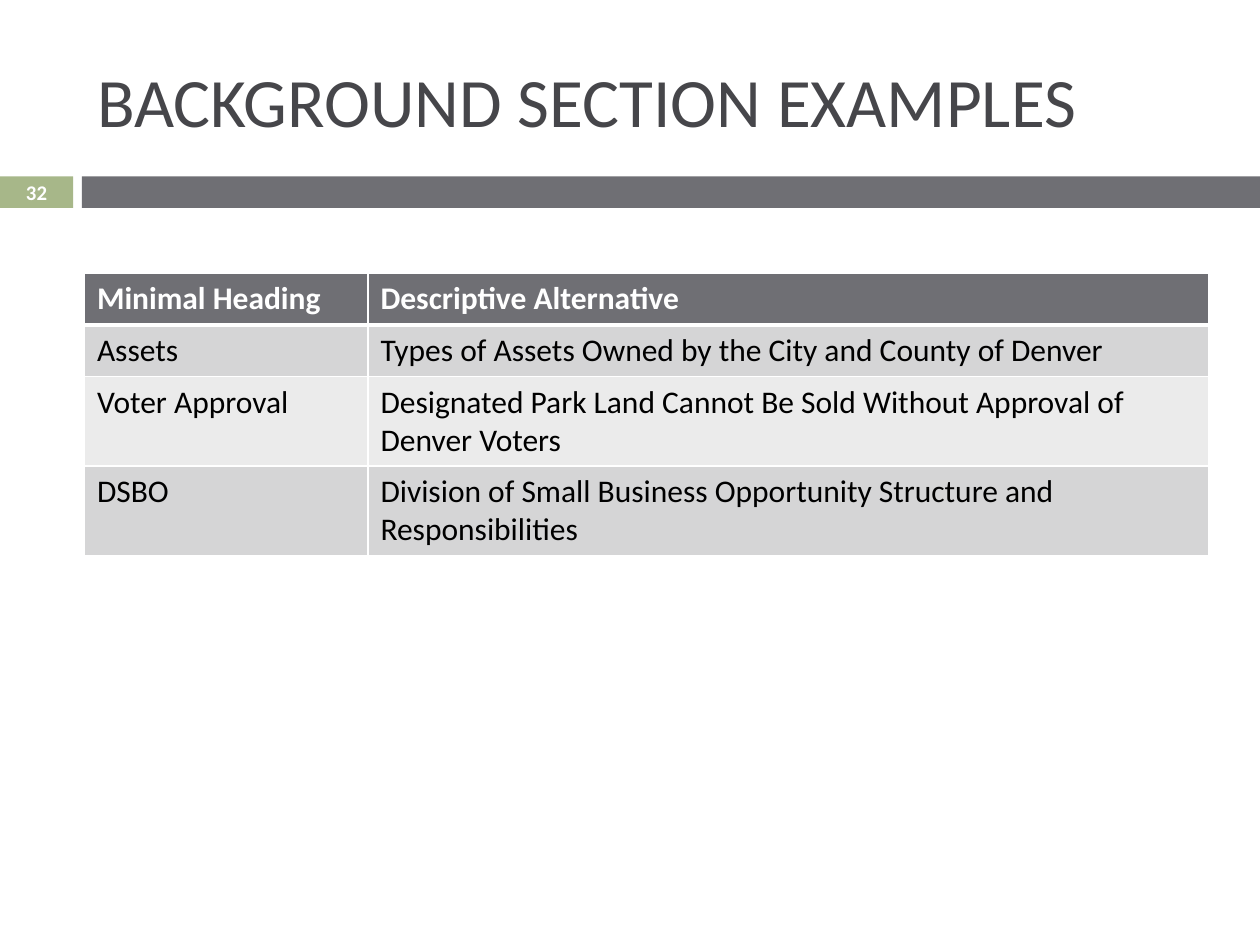
from lxml import etree
from pptx import Presentation
from pptx.dml.color import RGBColor
from pptx.enum.shapes import MSO_SHAPE
from pptx.enum.text import MSO_ANCHOR, PP_ALIGN
from pptx.oxml.ns import qn
from pptx.util import Inches, Pt

RECT = MSO_SHAPE.RECTANGLE
MIDDLE = MSO_ANCHOR.MIDDLE
LEFT, CENTER = PP_ALIGN.LEFT, PP_ALIGN.CENTER

WHITE = RGBColor(0xFF, 0xFF, 0xFF)
BLACK = RGBColor(0, 0, 0)
GREEN = RGBColor(0xA7, 0xB7, 0x89)
GRAY = RGBColor(0x6F, 0x6F, 0x74)
DARK = RGBColor(0x46, 0x46, 0x4A)
BANDS = (RGBColor(0xD5, 0xD5, 0xD6), RGBColor(0xEB, 0xEB, 0xEB))

FONT = "Calibri"
TITLE_FMT = {"name": FONT, "size": Pt(39.6), "bold": False, "color": DARK}
NUMBER_FMT = {"name": FONT, "size": Pt(11.9), "bold": True, "color": WHITE}
HEAD_FMT = {"name": FONT, "size": Pt(18), "bold": True, "color": WHITE}
BODY_FMT = {"name": FONT, "size": Pt(18), "bold": False, "color": BLACK}

# Shared content column and header strip, in inches
CONTENT_X, CONTENT_W = 0.67, 8.92
STRIP = (0, 1.4, 10, 0.25)

ROWS = [
    ("Minimal Heading", "Descriptive Alternative"),
    ("Assets", "Types of Assets Owned by the City and County of Denver"),
    ("Voter Approval",
     "Designated Park Land Cannot Be Sold Without Approval of Denver Voters"),
    ("DSBO",
     "Division of Small Business Opportunity Structure and Responsibilities"),
]
ROW_HEIGHTS = (0.41, 0.41, 0.71, 0.71)


def write(tf, text, fmt, align=LEFT):
    p = tf.paragraphs[0]
    p.alignment = align
    r = p.add_run()
    r.text = text
    for key, value in fmt.items():
        if key == "color":
            r.font.color.rgb = value
        else:
            setattr(r.font, key, value)


def add_title(s, box, text):
    sp = s.shapes.title
    sp.left, sp.top, sp.width, sp.height = map(Inches, box)
    tf = sp.text_frame
    tf.word_wrap = True
    tf.vertical_anchor = MIDDLE
    write(tf, text, TITLE_FMT)


def add_strip(s, box, number):
    """Green number tab, a gap, then a gray bar to the slide's edge."""
    x, y, w, h = box
    tab_w, bar_x = 0.058 * w, 0.065 * w
    for left, width, color in ((x, tab_w, GREEN), (x + bar_x, w - bar_x, GRAY)):
        sp = s.shapes.add_shape(RECT, *map(Inches, (left, y, width, h)))
        sp.shadow.inherit = False
        sp.fill.solid()
        sp.fill.fore_color.rgb = color
        sp.line.fill.background()
    tf = s.shapes.add_textbox(*map(Inches, (x, y, tab_w, h))).text_frame
    tf.word_wrap = True
    tf.vertical_anchor = MIDDLE
    tf.margin_left = tf.margin_right = tf.margin_top = tf.margin_bottom = 0
    write(tf, number, NUMBER_FMT, CENTER)


def set_borders(cell, widths):
    tc_pr = cell._tc.get_or_add_tcPr()
    for side, width in widths.items():
        ln = etree.SubElement(tc_pr, qn(f"a:ln{side}"), w=str(Pt(width)))
        fill = etree.SubElement(ln, qn("a:solidFill"))
        etree.SubElement(fill, qn("a:srgbClr"), val=str(WHITE))


def add_examples(s, box):
    x, y, w, h = map(Inches, box)
    table = s.shapes.add_table(len(ROWS), 2, x, y, w, h).table
    table.columns[0].width = Inches(2.25)
    table.columns[1].width = w - Inches(2.25)
    for i, (row, height) in enumerate(zip(ROWS, ROW_HEIGHTS)):
        table.rows[i].height = Inches(height)
        for j, text in enumerate(row):
            cell = table.cell(i, j)
            # The rule under the heading row is heavier
            set_borders(cell, {"L": 1, "R": 1, "T": 3 if i == 1 else 1,
                               "B": 3 if i == 0 else 1})
            cell.fill.solid()
            cell.fill.fore_color.rgb = BANDS[(i - 1) % 2] if i else GRAY
            write(cell.text_frame, text, BODY_FMT if i else HEAD_FMT)


def main():
    prs = Presentation()
    prs.slide_width, prs.slide_height = Inches(10), Inches(7.5)
    s = prs.slides.add_slide(prs.slide_layouts[5])
    add_strip(s, STRIP, "32")
    add_title(s, (CONTENT_X, 0.25, CONTENT_W, 1.08), "BACKGROUND SECTION EXAMPLES")
    add_examples(s, (CONTENT_X, 2.17, CONTENT_W, sum(ROW_HEIGHTS)))
    prs.save("out.pptx")


if __name__ == "__main__":
    main()
